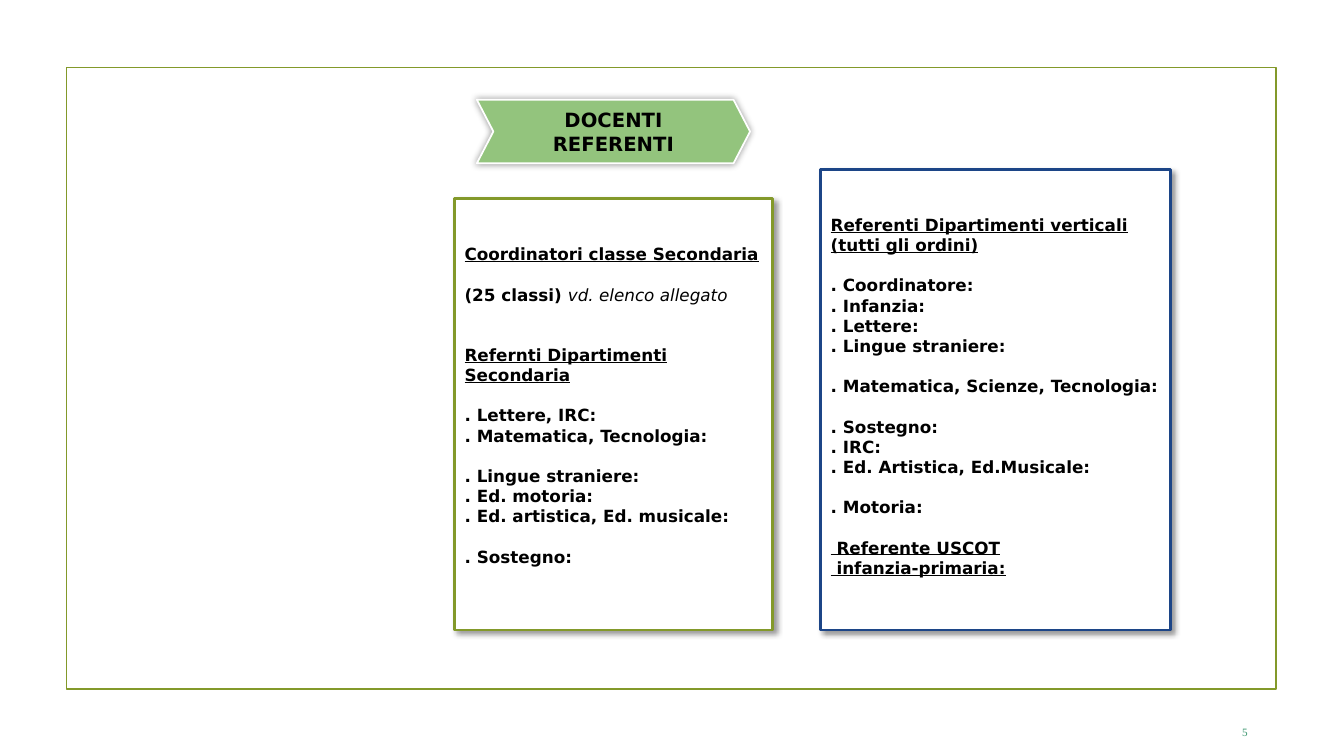
from dataclasses import dataclass

from lxml import etree
from pptx import Presentation, util as u
from pptx.dml.color import RGBColor
from pptx.enum import shapes, text
from pptx.oxml import ns

OLIVE = RGBColor(0x83, 0x99, 0x2A)
NAVY = RGBColor(0x1C, 0x45, 0x87)
GREEN = RGBColor(0x93, 0xC4, 0x7D)
TEAL = RGBColor(0x3C, 0x97, 0x70)
WHITE = RGBColor(0xFF, 0xFF, 0xFF)
BLACK = RGBColor(0, 0, 0)
SANS = "DejaVu Sans"
SERIF = "Times New Roman"
WIDE, HIGH = u.Inches(13.33), u.Inches(7.5)
ROW = 14.4  # height of one text row, in points


@dataclass
class Area:
    """Left, top, width and height in percent of the slide."""
    x: float
    y: float
    w: float
    h: float

    def box(self) -> tuple[int, int, int, int]:
        return (int(WIDE * self.x / 100), int(HIGH * self.y / 100),
                int(WIDE * self.w / 100), int(HIGH * self.h / 100))


@dataclass
class Line:
    words: str
    skip: int = 0  # empty rows above
    head: bool = False
    note: str = ""


@dataclass
class Panel:
    area: Area
    edge: RGBColor
    lines: list[Line]


PANELS = [
    Panel(Area(33.83, 26.27, 23.63, 57.07), OLIVE, [
        Line("Coordinatori classe Secondaria", head=True),
        Line("(25 classi) ", 1, note="vd. elenco allegato"),
        Line("Refernti Dipartimenti Secondaria", 2, head=True),
        Line(". Lettere, IRC:", 1),
        Line(". Matematica, Tecnologia:"),
        Line(". Lingue straniere:", 1),
        Line(". Ed. motoria:"),
        Line(". Ed. artistica, Ed. musicale:"),
        Line(". Sostegno:", 1),
    ]),
    Panel(Area(61.07, 22.4, 26.03, 60.93), NAVY, [
        Line("Referenti Dipartimenti verticali (tutti gli ordini)", head=True),
        Line(". Coordinatore:", 1),
        Line(". Infanzia:"),
        Line(". Lettere:"),
        Line(". Lingue straniere:"),
        Line(". Matematica, Scienze, Tecnologia:", 1),
        Line(". Sostegno:", 1),
        Line(". IRC:"),
        Line(". Ed. Artistica, Ed.Musicale:"),
        Line(". Motoria:", 1),
        Line(" Referente USCOT", 1, head=True),
        Line(" infanzia-primaria:", head=True),
    ]),
]


def style(font, face: str, size: float, color: RGBColor, bold: bool = False) -> None:
    font.name, font.size, font.bold = face, u.Pt(size), bold
    font.color.rgb = color


def shade(shape, blur: float, dist: float, turn: int) -> None:
    """Give the shape a black shadow of 40 % opacity."""
    shape.shadow.inherit = False
    fx = shape._element.spPr.find(ns.qn("a:effectLst"))
    cast = etree.SubElement(fx, ns.qn("a:outerShdw"), blurRad=str(u.Pt(blur)),
                            dist=str(u.Pt(dist)), dir=str(turn * 60000),
                            algn="bl", rotWithShape="0")
    tint = etree.SubElement(cast, ns.qn("a:srgbClr"), val=str(BLACK))
    etree.SubElement(tint, ns.qn("a:alpha"), val="40000")


def draw(slide, kind, area: Area, edge: RGBColor, width: float, fill=None):
    shape = slide.shapes.add_shape(kind, *area.box())
    shape.shadow.inherit = False
    shape.line.color.rgb = edge
    shape.line.width = u.Pt(width)
    if fill is None:
        shape.fill.background()
    else:
        shape.fill.solid()
        shape.fill.fore_color.rgb = fill
    return shape


def add_panel(slide, panel: Panel) -> None:
    shape = draw(slide, shapes.MSO_SHAPE.RECTANGLE, panel.area, panel.edge, 2, WHITE)
    shade(shape, 4, 3, 45)
    frame = shape.text_frame
    frame.word_wrap = True
    frame.vertical_anchor = text.MSO_ANCHOR.TOP
    frame.margin_top = u.Inches(0.05) + u.Pt(2 * ROW)
    for i, line in enumerate(panel.lines):
        para = frame.paragraphs[0] if i == 0 else frame.add_paragraph()
        para.alignment = text.PP_ALIGN.LEFT
        para.space_before = u.Pt(line.skip * ROW)
        style(para.font, SANS, 12, BLACK, True)
        para.font.underline = line.head
        para.add_run().text = line.words
        if line.note:
            note = para.add_run()
            note.text = line.note
            note.font.bold, note.font.italic = False, True


def add_banner(slide) -> None:
    shape = draw(slide, shapes.MSO_SHAPE.CHEVRON, Area(35.48, 13.2, 20.33, 8.4),
                 WHITE, 1.25, GREEN)
    shape.adjustments[0] = 0.26
    shade(shape, 5, 0, 0)
    frame = shape.text_frame
    frame.word_wrap = True
    frame.vertical_anchor = text.MSO_ANCHOR.MIDDLE
    para = frame.paragraphs[0]
    para.text = "DOCENTI REFERENTI"
    para.alignment = text.PP_ALIGN.CENTER
    style(para.font, SANS, 14, BLACK, True)


def add_number(slide) -> None:
    frame = slide.shapes.add_textbox(*Area(92.42, 96, 3.53, 2.93).box()).text_frame
    frame.word_wrap = True
    frame.margin_left = frame.margin_right = frame.margin_top = frame.margin_bottom = 0
    para = frame.paragraphs[0]
    para.text = "5"
    para.alignment = text.PP_ALIGN.LEFT
    style(para.font, SERIF, 8, TEAL)


def main() -> None:
    deck = Presentation()
    deck.slide_width, deck.slide_height = WIDE, HIGH
    slide = deck.slides.add_slide(deck.slide_layouts[6])
    draw(slide, shapes.MSO_SHAPE.RECTANGLE, Area(4.95, 8.93, 90.02, 82.27), OLIVE, 1.25)
    add_number(slide)
    add_banner(slide)
    for panel in PANELS:
        add_panel(slide, panel)
    deck.save("out.pptx")


if __name__ == "__main__":
    main()
